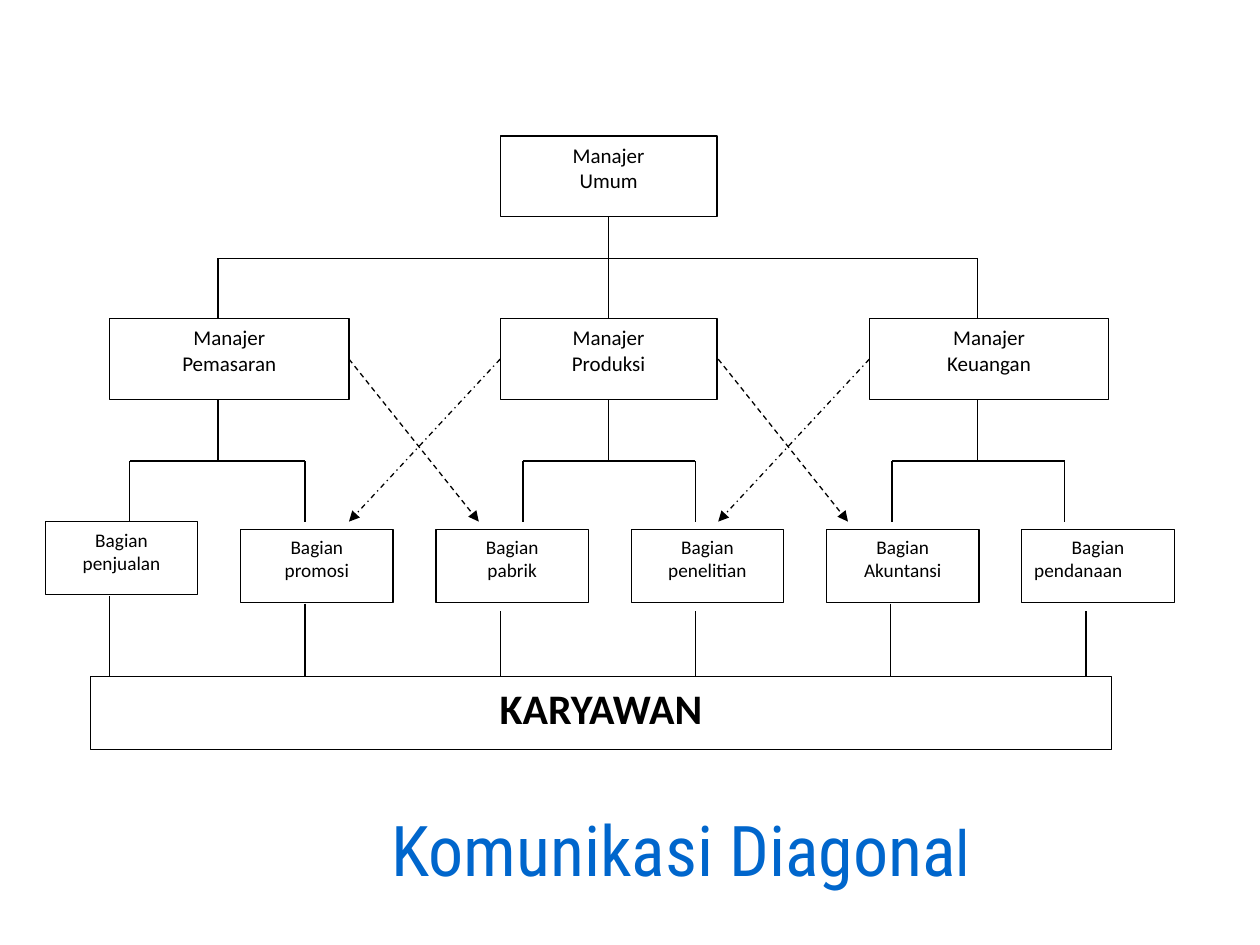
import dataclasses

import lxml.etree
import pptx
import pptx.dml.color
import pptx.enum.dml
import pptx.enum.shapes
import pptx.enum.text
import pptx.oxml
import pptx.oxml.ns
import pptx.slide
import pptx.text.text
import pptx.util

EMU_PER_PX = 9144
BLACK, WHITE, BLUE, PALE_BLUE = "000000", "FFFFFF", "0066CC", "99CCFF"
DASH = pptx.enum.dml.MSO_LINE.DASH
DASH_DOT = pptx.enum.dml.MSO_LINE.DASH_DOT
CENTER = pptx.enum.text.PP_ALIGN.CENTER
LEFT = pptx.enum.text.PP_ALIGN.LEFT


@dataclasses.dataclass(frozen=True)
class Unit:
    left: int
    top: int
    width: int
    height: int
    lines: tuple[str, ...]
    size: int
    bold: bool = False
    last_align: int = CENTER


@dataclasses.dataclass(frozen=True)
class Link:
    x1: int
    y1: int
    x2: int
    y2: int
    dash: int | None = None


@dataclasses.dataclass(frozen=True)
class Branch:
    center: int
    left: int
    right: int


MANAGERS = [
    Unit(397, 108, 172, 64, ("Manajer", "Umum"), 12),
    Unit(87, 253, 190, 64, ("Manajer", "Pemasaran"), 12),
    Unit(397, 253, 172, 64, ("Manajer", "Produksi"), 12),
    Unit(690, 253, 190, 64, ("Manajer", "Keuangan"), 12),
]
DEPARTMENTS = ["penjualan", "promosi", "pabrik", "penelitian", "Akuntansi", "pendanaan"]
STAFF_LINK_TOPS = [473, 479, 485, 485, 479, 485]
DEPARTMENT_STEP = 155
BRANCHES = [Branch(173, 103, 242), Branch(483, 415, 552), Branch(776, 708, 845)]
STAFF = Unit(72, 537, 810, 58, ("KARYAWAN",), 24, bold=True)


def px(length: int) -> pptx.util.Emu:
    """Convert pixels to EMU."""
    return pptx.util.Emu(length * EMU_PER_PX)


def color(value: str) -> pptx.dml.color.RGBColor:
    """Convert a hex string to a colour."""
    return pptx.dml.color.RGBColor.from_string(value)


def draw_unit(page: pptx.slide.Slide, unit: Unit) -> None:
    """Draw one bordered box of the organisation chart."""
    box = page.shapes.add_shape(
        pptx.enum.shapes.MSO_SHAPE.RECTANGLE,
        px(unit.left), px(unit.top), px(unit.width), px(unit.height),
    )
    box.shadow.inherit = False
    box.fill.solid()
    box.fill.fore_color.rgb = color(WHITE)
    box.line.color.rgb = color(BLACK)
    box.line.width = pptx.util.Pt(0.75)
    frame = box.text_frame
    frame.word_wrap = True
    frame.vertical_anchor = pptx.enum.text.MSO_ANCHOR.TOP
    for index, line in enumerate(unit.lines):
        para = frame.add_paragraph() if index else frame.paragraphs[0]
        para.text = line
        para.alignment = CENTER
        para.font.name = "Calibri"
        para.font.size = pptx.util.Pt(unit.size)
        para.font.bold = unit.bold
        para.font.color.rgb = color(BLACK)
    frame.paragraphs[-1].alignment = unit.last_align


def draw_link(page: pptx.slide.Slide, link: Link) -> None:
    """Draw a plain line, or an arrow when the link is dashed."""
    connector = page.shapes.add_connector(
        pptx.enum.shapes.MSO_CONNECTOR.STRAIGHT,
        px(link.x1), px(link.y1), px(link.x2), px(link.y2),
    )
    connector.line.color.rgb = color(BLACK)
    connector.line.width = pptx.util.Pt(0.75)
    if link.dash is not None:
        connector.line.dash_style = link.dash
        outline = connector.line._get_or_add_ln()
        tail = lxml.etree.SubElement(outline, pptx.oxml.ns.qn("a:tailEnd"))
        tail.set("type", "triangle")
    properties = connector._element.spPr
    lxml.etree.SubElement(properties, pptx.oxml.ns.qn("a:effectLst"))


def add_title_span(para: pptx.text.text._Paragraph, text: str, size: int) -> None:
    """Add one outlined run of the title."""
    span = para.add_run()
    span.text = text
    span.font.name = "Roboto Condensed"
    span.font.size = pptx.util.Pt(size)
    span.font.color.rgb = color(BLUE)
    outline = pptx.oxml.parse_xml(
        f'<a:ln {pptx.oxml.ns.nsdecls("a")} w="{pptx.util.Pt(1.5)}">'
        f'<a:solidFill><a:srgbClr val="{PALE_BLUE}"/></a:solidFill></a:ln>'
    )
    span.font._element.insert(0, outline)


def draw_title(page: pptx.slide.Slide) -> None:
    """Draw the title under the chart."""
    box = page.shapes.add_textbox(px(98), px(635), px(885), px(86))
    box.text_frame.word_wrap = False
    para = box.text_frame.paragraphs[0]
    para.alignment = CENTER
    add_title_span(para, "Komunikasi Diagona", 40)
    add_title_span(para, "l", 36)


def chart_units() -> list[Unit]:
    """List the managers and the evenly spaced departments."""
    units = list(MANAGERS)
    for index, name in enumerate(DEPARTMENTS):
        units.append(Unit(
            36 + index * DEPARTMENT_STEP, 420 if index else 414, 121, 58,
            ("Bagian", name), 11,
            last_align=LEFT if name == "pendanaan" else CENTER,
        ))
    return units


def chart_links() -> list[Link]:
    """List the hierarchy lines and the diagonal arrows."""
    links = [Link(483, 172, 483, 253), Link(173, 205, 776, 205)]
    links += [Link(x, 205, x, 253) for x in (173, 776)]
    for branch in BRANCHES:
        links.append(Link(branch.center, 317, branch.center, 366))
        links.append(Link(branch.left, 366, branch.right, 366))
        links += [Link(x, 366, x, 414) for x in (branch.left, branch.right)]
    for index, top in enumerate(STAFF_LINK_TOPS):
        x = 87 + index * DEPARTMENT_STEP
        links.append(Link(x, top, x, top + 58 if index else STAFF.top))
    for shift in (0, 293):
        links.append(Link(277 + shift, 285, 380 + shift, 414, DASH))
        links.append(Link(397 + shift, 285, 277 + shift, 414, DASH_DOT))
    return links


def main() -> None:
    """Build the slide and save it."""
    deck = pptx.Presentation()
    deck.slide_width, deck.slide_height = px(1000), px(750)
    page = deck.slides.add_slide(deck.slide_layouts[6])
    for unit in chart_units():
        draw_unit(page, unit)
    for link in chart_links():
        draw_link(page, link)
    draw_unit(page, STAFF)
    draw_title(page)
    deck.save("out.pptx")


if __name__ == "__main__":
    main()
